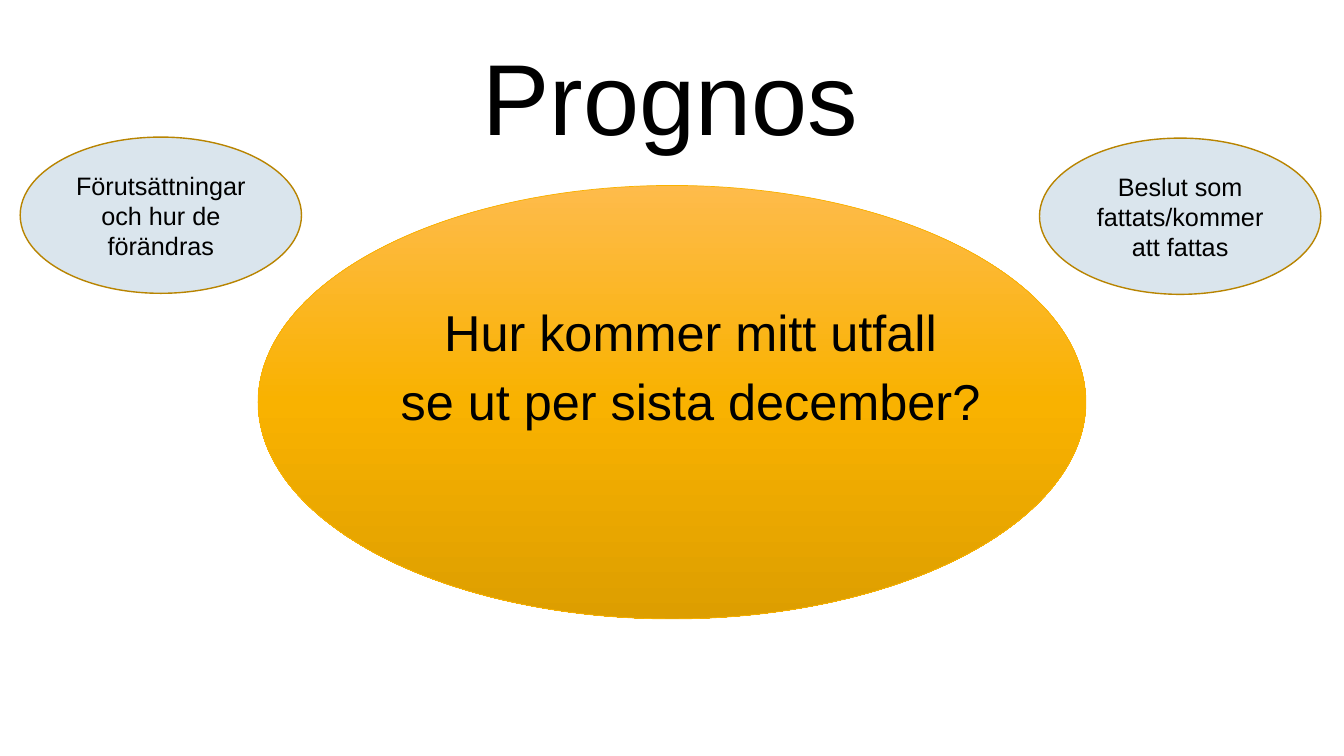
"""Build the Prognos slide: a central question with two influencing factors."""
from copy import deepcopy

from pptx import Presentation
from pptx.dml.color import RGBColor
from pptx.enum.shapes import MSO_SHAPE
from pptx.enum.text import MSO_ANCHOR, PP_ALIGN
from pptx.oxml.ns import qn
from pptx.util import Inches, Pt

BLACK = RGBColor(0x00, 0x00, 0x00)
PALE_BLUE = RGBColor(0xDA, 0xE5, 0xED)
DARK_GOLD = RGBColor(0xB8, 0x84, 0x00)
GOLD = RGBColor(0xF9, 0xB2, 0x00)
GOLD_STOPS = (RGBColor(0xFE, 0xBB, 0x4B), GOLD, RGBColor(0xDD, 0x9E, 0x00))


def format_paragraph(p, size):
    p.alignment = PP_ALIGN.CENTER
    p.font.name = "Arial"
    p.font.size = Pt(size)
    p.font.color.rgb = BLACK


def set_title(slide, text):
    title = slide.shapes.title
    title.left, title.top = Inches(2.15), Inches(0.29)
    title.width, title.height = Inches(9), Inches(1.31)
    tf = title.text_frame
    tf.text = text
    tf.vertical_anchor = MSO_ANCHOR.TOP
    p = tf.paragraphs[0]
    p.space_before = Pt(0)
    p.line_spacing = 1.0
    format_paragraph(p, 72)


def add_ellipse(slide, left, top, width, height, line_color, line_width):
    sp = slide.shapes.add_shape(
        MSO_SHAPE.OVAL, Inches(left), Inches(top), Inches(width), Inches(height)
    )
    sp.shadow.inherit = False
    sp.line.color.rgb = line_color
    sp.line.width = Pt(line_width)
    return sp


def fill_gradient(sp, colors):
    sp.fill.gradient()
    sp.fill.gradient_angle = 270
    gs_list = sp._element.spPr.find(".//" + qn("a:gsLst"))
    gs_list.insert(1, deepcopy(gs_list[0]))
    for i, (stop, color) in enumerate(zip(sp.fill.gradient_stops, colors)):
        stop.position = i / (len(colors) - 1)
        stop.color.rgb = color


def add_question(slide, lines):
    box = slide.shapes.add_textbox(Inches(3.75), Inches(3.06), Inches(6.2), Inches(1.3))
    tf = box.text_frame
    tf.word_wrap = True
    tf.margin_left = tf.margin_right = tf.margin_top = tf.margin_bottom = 0
    for i, line in enumerate(lines):
        p = tf.add_paragraph() if i else tf.paragraphs[0]
        p.text = line
        p.line_spacing = 0.9
        p.space_before = Pt(10 if i else 0)
        format_paragraph(p, 36)


def add_factor(slide, left, top, text):
    sp = add_ellipse(slide, left, top, 2.79, 1.55, DARK_GOLD, 1)
    sp.fill.solid()
    sp.fill.fore_color.rgb = PALE_BLUE
    tf = sp.text_frame
    tf.word_wrap = True
    tf.vertical_anchor = MSO_ANCHOR.MIDDLE
    tf.text = text
    format_paragraph(tf.paragraphs[0], 18)


def main():
    prs = Presentation()
    prs.slide_width, prs.slide_height = Inches(13.33), Inches(7.5)
    slide = prs.slides.add_slide(prs.slide_layouts[5])
    set_title(slide, "Prognos")
    fill_gradient(add_ellipse(slide, 2.56, 1.84, 8.21, 4.3, GOLD, 0.5), GOLD_STOPS)
    add_question(slide, ["Hur kommer mitt utfall", "se ut per sista december?"])
    add_factor(slide, 10.31, 1.37, "Beslut som fattats/kommer att fattas")
    add_factor(slide, 0.2, 1.36, "Förutsättningar och hur de förändras")
    prs.save("out.pptx")


if __name__ == "__main__":
    main()
